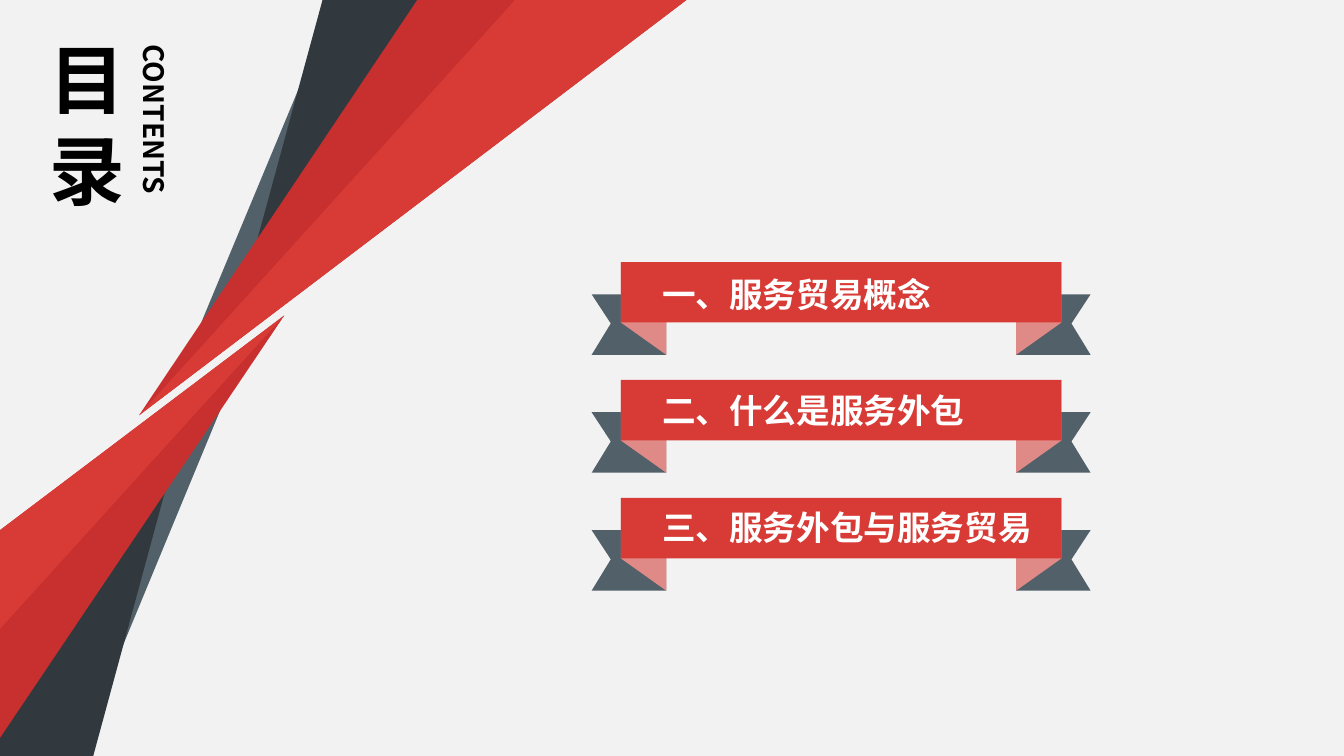
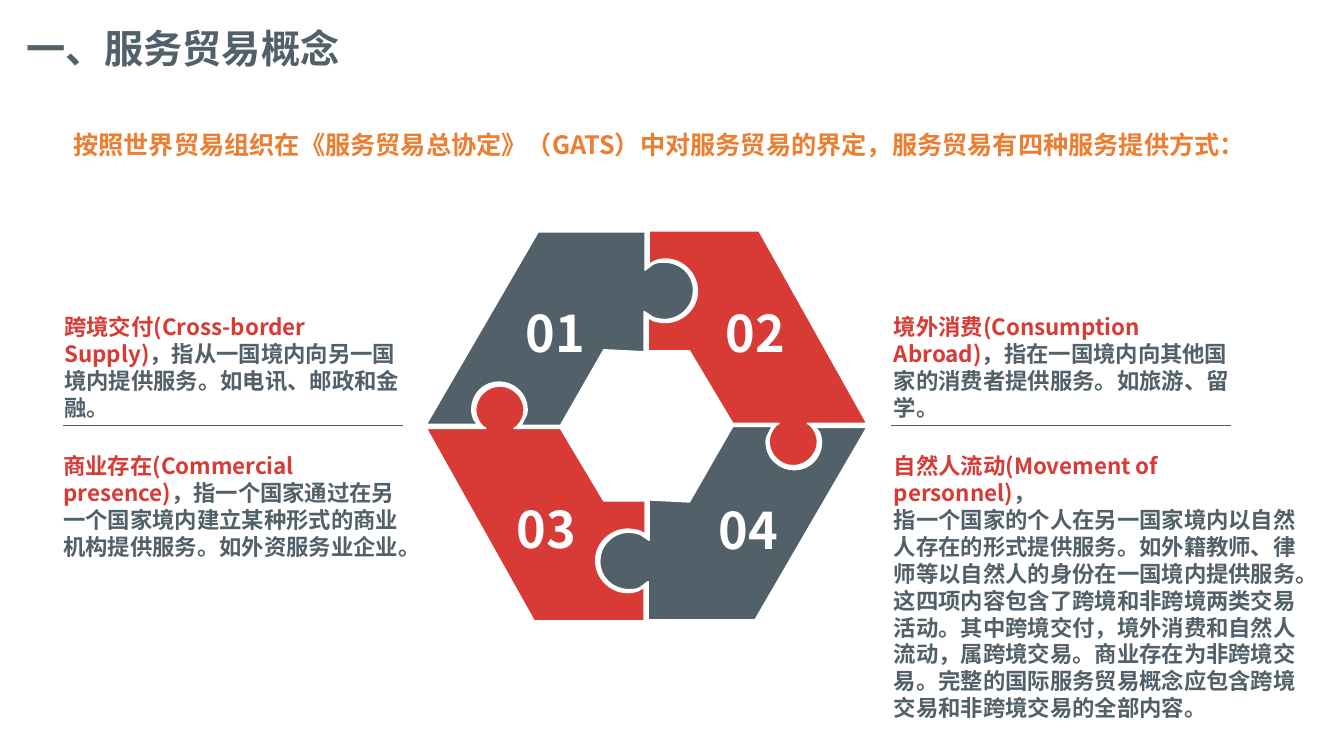
from lxml.etree import SubElement
from pptx import Presentation
from pptx.dml.color import RGBColor
from pptx.enum.shapes import MSO_CONNECTOR, MSO_SHAPE
from pptx.enum.text import MSO_ANCHOR, MSO_AUTO_SIZE, PP_ALIGN
from pptx.oxml.ns import qn
from pptx.util import Inches, Pt

RED = RGBColor(0xD8, 0x3A, 0x35)
DARK_RED = RGBColor(0xC7, 0x30, 0x2F)
PINK = RGBColor(0xDF, 0x8A, 0x86)
SLATE = RGBColor(0x51, 0x60, 0x69)
CHARCOAL = RGBColor(0x31, 0x39, 0x3E)
ORANGE = RGBColor(0xED, 0x7D, 0x31)
GREY = RGBColor(0x59, 0x59, 0x59)
PALE = RGBColor(0xF2, 0xF2, 0xF2)
WHITE = RGBColor(0xFF, 0xFF, 0xFF)
BLACK = RGBColor(0, 0, 0)
FONT = "Noto Sans CJK SC"

BANDS = [
    (SLATE, [(3.33, 0), (1.93, 3.36), (4.42, 0.67)]),
    (CHARCOAL, [(4.18, 0), (3.2, 0), (2.44, 2.79)]),
    (DARK_RED, [(6.81, 0), (4.14, 0), (1.38, 4.12)]),
    (RED, [(6.81, 0), (5.11, 0), (1.38, 4.12)]),
    (SLATE, [(2.26, 3.89), (0, 6.33), (0, 6.72), (0.87, 7.25)]),
    (CHARCOAL, [(1.75, 4.46), (0, 7.27), (0, 7.52), (0.92, 7.52)]),
    (DARK_RED, [(2.82, 3.13), (0, 5.26), (0, 7.32)]),
    (RED, [(2.82, 3.13), (0, 5.26), (0, 6.24)]),
]
RIBBON_LEFT, RIBBON_RIGHT = 6.16, 10.53
RIBBON_TAIL = [(6.61, 0.92), (5.87, 0.92), (6.06, 0.61), (5.87, 0.32), (6.61, 0.32)]
RIBBON_FOLD = [(6.61, 0.92), (6.16, 0.6), (6.16, 0), (6.61, 0.14)]
CONTENTS = [("一、服务贸易概念", 2.67, 3.54, 0.91), ("二、什么是服务外包", 3.82, 3.54, 0.5),
            ("三、服务外包与服务贸易", 4.98, 4.11, 0.5)]

SLATE_PIECE = [
    (5.56, 4.22), (5.17, 4.22), (5.2, 4.16),
    (5.22, 4.13, 5.23, 4.1, 5.23, 4.06), (5.23, 3.91, 5.1, 3.79, 4.95, 3.79),
    (4.8, 3.79, 4.68, 3.91, 4.68, 4.06), (4.68, 4.1, 4.69, 4.13, 4.7, 4.16),
    (4.74, 4.21), (4.23, 4.21), (5.34, 2.3), (6.4, 2.3), (6.4, 2.68), (6.48, 2.62),
    (6.52, 2.6, 6.55, 2.6, 6.59, 2.6), (6.75, 2.6, 6.88, 2.72, 6.88, 2.88),
    (6.88, 2.92, 6.87, 2.96, 6.86, 2.99), (6.81, 3.1, 6.71, 3.17, 6.59, 3.17),
    (6.55, 3.17, 6.52, 3.16, 6.48, 3.15), (6.39, 3.09), (6.39, 3.49), (5.99, 3.47)]
RED_PIECE = [
    (7.87, 4.62), (7.74, 4.62, 7.63, 4.51, 7.63, 4.38),
    (7.63, 4.32, 7.66, 4.26, 7.7, 4.22), (7.73, 4.2), (7.27, 4.2), (6.84, 3.48),
    (6.43, 3.48), (6.43, 3.15), (6.48, 3.18), (6.51, 3.19, 6.56, 3.2, 6.6, 3.2),
    (6.77, 3.2, 6.92, 3.06, 6.92, 2.89), (6.92, 2.71, 6.77, 2.57, 6.6, 2.57),
    (6.56, 2.57, 6.51, 2.58, 6.48, 2.6), (6.44, 2.62), (6.44, 2.29), (7.53, 2.29),
    (8.6, 4.2), (8.01, 4.2), (8.04, 4.22), (8.08, 4.26, 8.11, 4.32, 8.11, 4.38),
    (8.11, 4.51, 8, 4.62, 7.87, 4.62)]
MODES = [
    (0.54, 3.06, 3.69, 0.91, "跨境交付(Cross-border Supply)",
     ["，指从一国境内向另一国境内提供服务。如电讯、邮政和金融。"]),
    (0.53, 4.44, 3.69, 1.18, "商业存在(Commercial presence)",
     ["，指一个国家通过在另一个国家境内建立某种形式的商业机构提供服务。如外资服务业企业。"]),
    (8.77, 3.06, 3.69, 0.91, "境外消费(Consumption Abroad)",
     ["，指在一国境内向其他国家的消费者提供服务。如旅游、留学。"]),
    (8.77, 4.44, 4.22, 2.52, "自然人流动(Movement of personnel)",
     ["，", "指一个国家的个人在另一国家境内以自然人存在的形式提供服务。如外籍教师、律师等以自然人"
      "的身份在一国境内提供服务。这四项内容包含了跨境和非跨境两类交易活动。其中跨境交付，境外消费"
      "和自然人流动，属跨境交易。商业存在为非跨境交易。完整的国际服务贸易概念应包含跨境交易和非跨境"
      "交易的全部内容。"]),
]


def half_turn(outline):
    return [tuple((8.45 if i % 2 else 12.83) - v for i, v in enumerate(step))
            for step in outline]


class Deck:
    def __init__(self):
        self.prs = Presentation()
        self.prs.slide_width = Inches(40 / 3)
        self.prs.slide_height = Inches(7.5)
        self.s = None

    def slide(self, background):
        self.s = self.prs.slides.add_slide(self.prs.slide_layouts[5])
        fill = self.s.background.fill
        fill.solid()
        fill.fore_color.rgb = background

    def paint(self, sp, fill, line=None):
        sp.shadow.inherit = False
        sp.fill.solid()
        sp.fill.fore_color.rgb = fill
        if line is None:
            sp.line.fill.background()
        else:
            sp.line.color.rgb = line
            sp.line.width = Pt(1)

    def outline(self, steps, fill, line=None, parent=None):
        nodes = [(Inches(step[i]), Inches(step[i + 1]))
                 for step in steps for i in range(0, len(step), 2)]
        builder = (parent or self.s).shapes.build_freeform(*nodes[0])
        builder.add_line_segments(nodes[1:], close=True)
        sp = builder.convert_to_shape()
        segments = iter(list(sp._element.iter(qn("a:lnTo"))))
        for step in steps[1:]:
            segment = next(segments)
            if len(step) == 6:
                segment.tag = qn("a:cubicBezTo")
                for _ in range(2):
                    extra = next(segments)
                    segment.append(extra[0])
                    extra.getparent().remove(extra)
        self.paint(sp, fill, line)

    def rectangle(self, x, y, w, h, fill):
        sp = self.s.shapes.add_shape(MSO_SHAPE.RECTANGLE, Inches(x), Inches(y),
                                     Inches(w), Inches(h))
        self.paint(sp, fill)

    def rule(self, x, y, length):
        line = self.s.shapes.add_connector(MSO_CONNECTOR.STRAIGHT, Inches(x), Inches(y),
                                           Inches(x + length), Inches(y))
        line.line.color.rgb = GREY
        line.line.width = Pt(0.5)
        SubElement(line._element.spPr, qn("a:effectLst"))

    def style(self, r, size, color):
        r.font.name = FONT
        r.font.size = Pt(size)
        r.font.bold = True
        r.font.color.rgb = color
        SubElement(r._r.get_or_add_rPr(), qn("a:ea")).set("typeface", FONT)

    def frame(self, sp, wrap=True):
        tf = sp.text_frame
        tf.word_wrap = wrap
        tf.auto_size = MSO_AUTO_SIZE.SHAPE_TO_FIT_TEXT
        tf.vertical_anchor = MSO_ANCHOR.TOP
        return tf

    def title(self, x, y, w, h, text, size, color, align=PP_ALIGN.LEFT):
        sp = self.s.shapes.title
        sp.left, sp.top, sp.width, sp.height = (Inches(v) for v in (x, y, w, h))
        tf = self.frame(sp)
        tf.text = text
        p = tf.paragraphs[0]
        p.alignment = align
        self.style(p.runs[0], size, color)

    def text(self, x, y, w, h, paragraphs, size, wrap=True):
        sp = self.s.shapes.add_textbox(Inches(x), Inches(y), Inches(w), Inches(h))
        tf = self.frame(sp, wrap)
        for i, runs in enumerate(paragraphs):
            p = tf.add_paragraph() if i else tf.paragraphs[0]
            for text, color in runs:
                r = p.add_run()
                r.text = text
                self.style(r, size, color)
        return sp

    def label(self, x, y, w, h, text, size, color, wrap=True):
        return self.text(x, y, w, h, [[(text, color)]], size, wrap)

    def ribbon(self, y):
        for mirrored in (False, True):
            for corners, fill in ((RIBBON_TAIL, SLATE), (RIBBON_FOLD, PINK)):
                self.outline([(RIBBON_LEFT + RIBBON_RIGHT - x if mirrored else x, y + dy)
                              for x, dy in corners], fill)
        self.rectangle(RIBBON_LEFT, y, RIBBON_RIGHT - RIBBON_LEFT, 0.6, RED)


def contents_slide(deck):
    deck.slide(PALE)
    bands = deck.s.shapes.add_group_shape()
    for fill, corners in BANDS:
        deck.outline(corners, fill, parent=bands)
    deck.title(0.39, 0.28, 0.95, 1.92, "目录", 54, BLACK, PP_ALIGN.JUSTIFY)
    sp = deck.label(0.57, 1.09, 1.93, 0.44, "CONTENTS", 20, BLACK)
    sp.rotation = 90
    sp.text_frame.paragraphs[0].alignment = PP_ALIGN.JUSTIFY
    for i in range(len(CONTENTS)):
        deck.ribbon(2.6 + 1.17 * i)
    for text, y, w, h in CONTENTS:
        deck.label(6.47, y, w, h, text, 24, WHITE)


def concept_slide(deck):
    deck.slide(WHITE)
    deck.title(0.16, 0.19, 3.82, 0.57, "一、服务贸易概念", 28, SLATE)
    pieces = [("01", SLATE_PIECE, SLATE, 5.12, 2.95, 0.62),
              ("02", RED_PIECE, RED, 7.1, 2.95, 0.62),
              ("03", half_turn(RED_PIECE), RED, 5.03, 4.89, 0.71),
              ("04", half_turn(SLATE_PIECE), SLATE, 7.03, 4.9, 0.71)]
    for number, steps, fill, x, y, h in pieces:
        deck.outline(steps, fill, WHITE)
        deck.label(x, y, 0.84, h, number, 36, WHITE)
    for x in (8.84, 0.63):
        deck.rule(x, 4.22, 3.37)
    for x, y, w, h, name, (first, *rest) in MODES:
        paragraphs = [[(name, RED), (first, SLATE)]] + [[(text, SLATE)] for text in rest]
        deck.text(x, y, w, h, paragraphs, 16)
    deck.label(0.63, 1.23, 11.87, 0.4,
               "按照世界贸易组织在《服务贸易总协定》（GATS）中对服务贸易的界定，服务贸易有四种服务提供方式：",
               18, ORANGE, wrap=False)


def main():
    deck = Deck()
    contents_slide(deck)
    concept_slide(deck)
    deck.prs.save("out.pptx")


if __name__ == "__main__":
    main()
